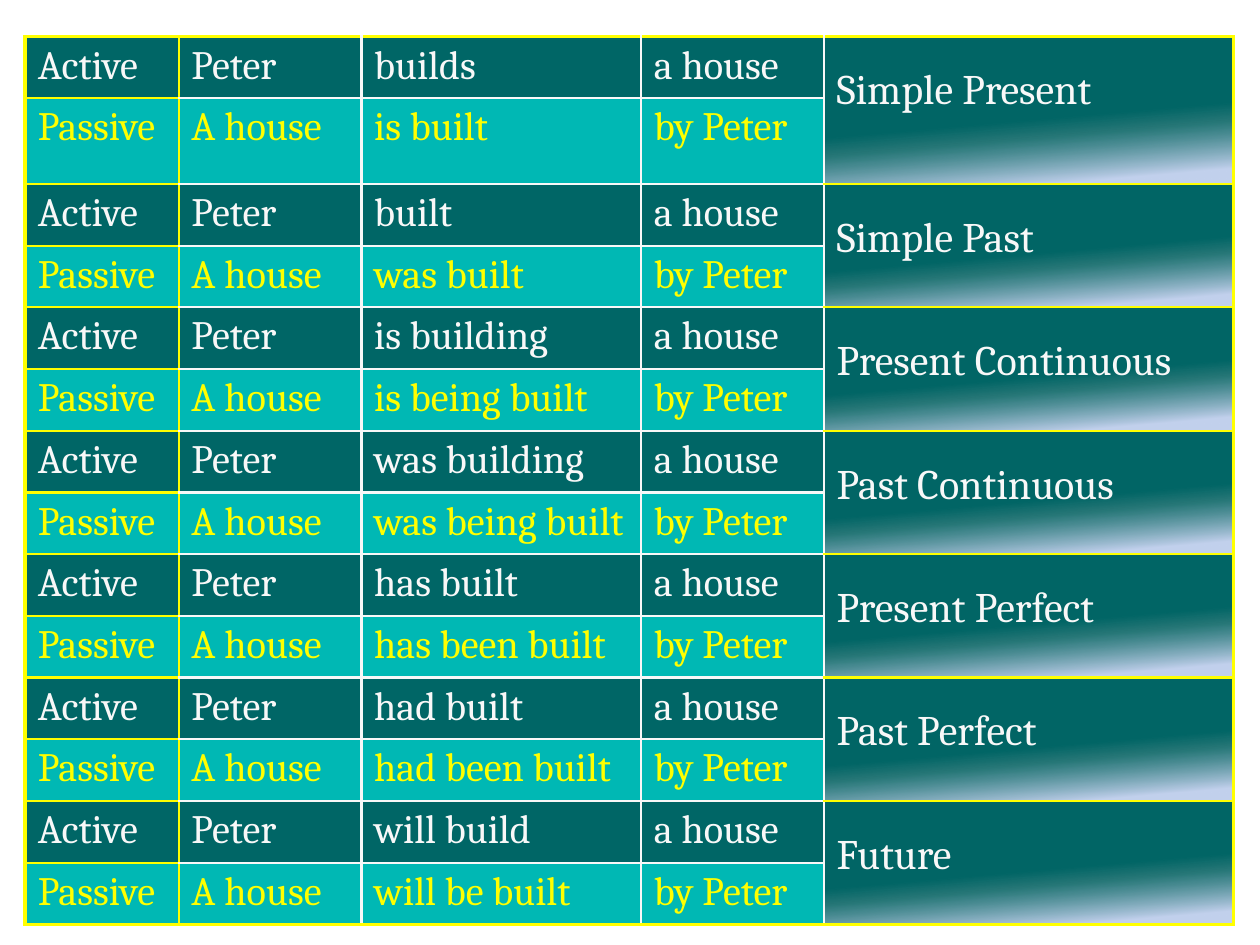
"""Build a slide with a table of active and passive sentences by tense."""
from lxml import etree
from pptx import Presentation
from pptx.dml.color import RGBColor
from pptx.oxml import parse_xml
from pptx.oxml.ns import nsdecls
from pptx.util import Inches, Pt

COLORS = {"dark": "006666", "teal": "00B8B4", "yellow": "FFFF00",
          "white": "F8F8F8", "mid": "006060", "pale": "C2D1ED"}
TENSES = [
    ("Simple Present", "builds", "is built"),
    ("Simple Past", "built", "was built"),
    ("Present Continuous", "is building", "is being built"),
    ("Past Continuous", "was building", "was being built"),
    ("Present Perfect", "has built", "has been built"),
    ("Past Perfect", "had built", "had been built"),
    ("Future", "will build", "will be built"),
]
COL_WIDTHS = [1.22, 1.45, 2.22, 1.45, 3.25]
ROW_HEIGHT, TALL_ROW_HEIGHT = 0.49, 0.68
OUTER, INNER, PLAIN = ("yellow", 2.25), ("yellow", 1.5), ("white", 1.5)
GRADIENT = (
    f'<a:gradFill {nsdecls("a")} rotWithShape="1"><a:gsLst>'
    f'<a:gs pos="55000"><a:srgbClr val="{COLORS["dark"]}"/></a:gs>'
    f'<a:gs pos="65000"><a:srgbClr val="{COLORS["mid"]}"><a:alpha val="85000"/></a:srgbClr></a:gs>'
    f'<a:gs pos="91000"><a:srgbClr val="{COLORS["pale"]}"/></a:gs>'
    '</a:gsLst><a:lin ang="5100000" scaled="0"/></a:gradFill>')


def set_borders(cell, borders):
    tc_pr = cell._tc.get_or_add_tcPr()
    for side, (color, width) in borders.items():
        tc_pr.append(parse_xml(
            f'<a:ln{side} {nsdecls("a")} w="{Pt(width)}"><a:solidFill>'
            f'<a:srgbClr val="{COLORS[color]}"/></a:solidFill></a:ln{side}>'))
    return tc_pr


def set_text(cell, text, size, color, spacing=None):
    p = cell.text_frame.paragraphs[0]
    p.line_spacing = spacing
    r = p.add_run()
    r.text = text
    for name, value in {"name": "Cambria", "size": Pt(size)}.items():
        setattr(r.font, name, value)
    r.font.color.rgb = RGBColor.from_string(COLORS[color])


prs = Presentation()
prs.slide_width, prs.slide_height = Inches(10), Inches(7.5)
s = prs.slides.add_slide(prs.slide_layouts[6])

rows, cols = 2 * len(TENSES), len(COL_WIDTHS)
last_col = cols - 1
table = s.shapes.add_table(rows, cols, Inches(0.2), Inches(0.29),
                           Inches(sum(COL_WIDTHS)), Inches(rows * ROW_HEIGHT)).table
for col, width in zip(table.columns, COL_WIDTHS):
    col.width = Inches(width)
for row in table.rows:
    row.height = Inches(ROW_HEIGHT)
table.rows[1].height = Inches(TALL_ROW_HEIGHT)

for i, (tense, active, passive) in enumerate(TENSES):
    voices = [
        (["Active", "Peter", active, "a house"], "white", "dark"),
        (["Passive", "A house", passive, "by Peter"], "yellow", "teal"),
    ]
    table.cell(2 * i, last_col).merge(table.cell(2 * i + 1, last_col))
    for j, (words, color, fill) in enumerate(voices):
        row = 2 * i + j
        for col in range(cols):
            cell = table.cell(row, col)
            is_tense = col == last_col
            across = INNER if col in (0, last_col) else PLAIN
            at_bottom = row == rows - 1 or (is_tense and row == rows - 2)
            tc_pr = set_borders(cell, {
                "L": {0: OUTER, 1: INNER}.get(col, PLAIN),
                "R": {0: INNER, last_col: OUTER}.get(col, PLAIN),
                "T": OUTER if row == 0 else across,
                "B": OUTER if at_bottom else across,
            })
            if is_tense:
                tc_pr.append(etree.fromstring(GRADIENT))
            else:
                cell.fill.solid()
                cell.fill.fore_color.rgb = RGBColor.from_string(COLORS[fill])
                set_text(cell, words[col], 23, color)
    set_text(table.cell(2 * i, last_col), tense, 24, "white", 1.5)

prs.save("out.pptx")
